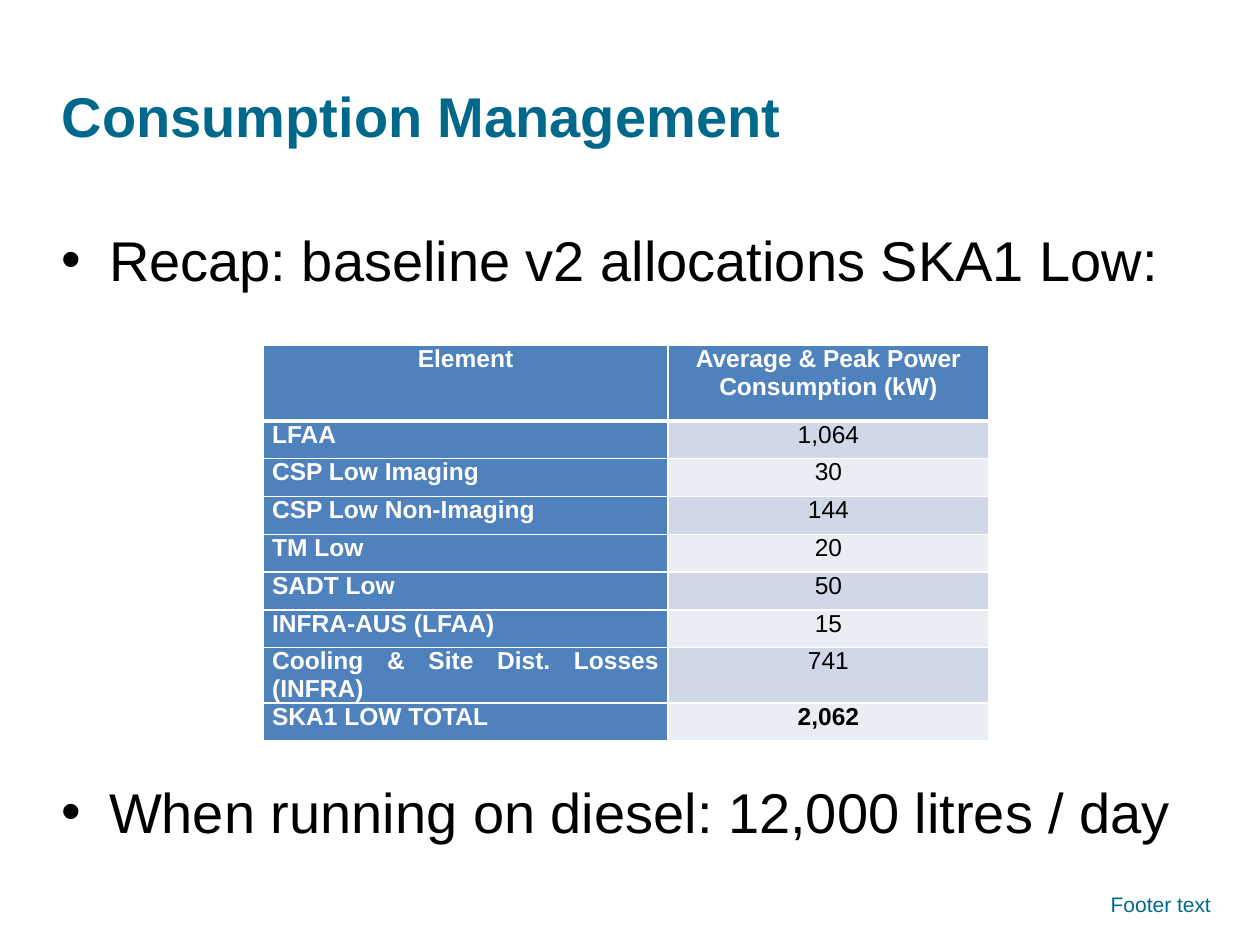
import pptx
import pptx.util
import pptx.dml.color
import pptx.enum.text
import pptx.oxml
import pptx.oxml.ns

Inches = pptx.util.Inches
Pt = pptx.util.Pt
RGBColor = pptx.dml.color.RGBColor
ALIGN = pptx.enum.text.PP_ALIGN
ANCHOR = pptx.enum.text.MSO_ANCHOR

TEAL = RGBColor(0x00, 0x68, 0x8A)
BLACK = RGBColor(0x00, 0x00, 0x00)
WHITE = RGBColor(0xFF, 0xFF, 0xFF)
BLUE = RGBColor(0x4F, 0x81, 0xBD)
BANDS = (RGBColor(0xD0, 0xD8, 0xE8), RGBColor(0xE9, 0xED, 0xF4))

HEADER = ("Element", "Average & Peak Power Consumption (kW)")
POWER = [
    ("LFAA", "1,064"),
    ("CSP Low Imaging", "30"),
    ("CSP Low Non-Imaging", "144"),
    ("TM Low", "20"),
    ("SADT Low", "50"),
    ("INFRA-AUS (LFAA)", "15"),
    ("Cooling & Site Dist. Losses (INFRA)", "741"),
    ("SKA1 LOW TOTAL", "2,062"),
]


def write(p, text, size=14, color=BLACK, bold=False, align=ALIGN.LEFT, before=0):
    """Write text into a paragraph with the given format."""
    p.alignment = align
    p.space_before = Pt(before)
    r = p.add_run()
    r.text = text
    r.font.name = "Arial"
    r.font.size = Pt(size)
    r.font.bold = bold
    r.font.color.rgb = color


def place(sp, box, anchor=ANCHOR.TOP):
    """Move a shape to its box and return its wrapped text frame."""
    sp.left, sp.top, sp.width, sp.height = (Inches(v) for v in box)
    tf = sp.text_frame
    tf.word_wrap = True
    tf.auto_size = pptx.enum.text.MSO_AUTO_SIZE.NONE
    tf.vertical_anchor = anchor
    return tf


def add_title(s, box):
    """Fill the title placeholder."""
    tf = place(s.shapes.title, box, ANCHOR.MIDDLE)
    write(tf.paragraphs[0], "Consumption Management", size=32, color=TEAL, bold=True)


def add_body(s, box):
    """Fill the body placeholder with a bullet above and below the table."""
    tf = place(s.placeholders[1], box)
    tf.margin_top = Inches(0.1)
    write(tf.paragraphs[0], "Recap: baseline v2 allocations SKA1 Low:", size=32)
    write(tf.add_paragraph(), "When running on diesel: 12,000 litres / day",
          size=32, before=277)


def add_footer(s, box):
    """Add the right-aligned footer."""
    tf = place(s.shapes.add_textbox(0, 0, 0, 0), box)
    write(tf.paragraphs[0], "Footer text", size=12, color=TEAL, align=ALIGN.RIGHT)


def set_borders(cell, top=1, bottom=1):
    """Draw white cell borders of the given widths in points."""
    tcPr = cell._tc.get_or_add_tcPr()
    for side, width in (("L", 1), ("R", 1), ("T", top), ("B", bottom)):
        tcPr.append(pptx.oxml.parse_xml(
            f'<a:ln{side} {pptx.oxml.ns.nsdecls("a")} w="{Pt(width)}">'
            f'<a:solidFill><a:srgbClr val="{WHITE}"/></a:solidFill></a:ln{side}>'))


def add_power_table(s, box):
    """Add the power table with a header row and a header column."""
    rows = [HEADER] + POWER
    table = s.shapes.add_table(len(rows), 2, *(Inches(v) for v in box)).table
    for column, width in zip(table.columns, (3.21, 2.55)):
        column.width = Inches(width)
    for i, row in enumerate(rows):
        table.rows[i].height = Inches(0.3 if i else 0.6)
        for j, text in enumerate(row):
            cell = table.cell(i, j)
            heading = i == 0 or j == 0
            set_borders(cell, top=3 if i == 1 else 1, bottom=1 if i else 3)
            cell.fill.solid()
            cell.fill.fore_color.rgb = BLUE if heading else BANDS[(i - 1) % 2]
            cell.margin_left = cell.margin_right = Inches(0.07)
            cell.margin_top = cell.margin_bottom = 0
            write(cell.text_frame.paragraphs[0], text,
                  color=WHITE if heading else BLACK,
                  bold=heading or i == len(POWER),
                  align=ALIGN.JUSTIFY if i and j == 0 else ALIGN.CENTER)


def main():
    """Build and save the slide."""
    prs = pptx.Presentation()
    prs.slide_width, prs.slide_height = Inches(10), Inches(7.5)
    s = prs.slides.add_slide(prs.slide_layouts[1])
    add_title(s, (0.39, 0.57, 6.86, 0.68))
    add_body(s, (0.39, 1.69, 9.16, 5.27))
    add_footer(s, (6.54, 7.03, 3.17, 0.4))
    add_power_table(s, (2.09, 2.74, 5.76, 3.0))
    prs.save("out.pptx")


if __name__ == "__main__":
    main()
